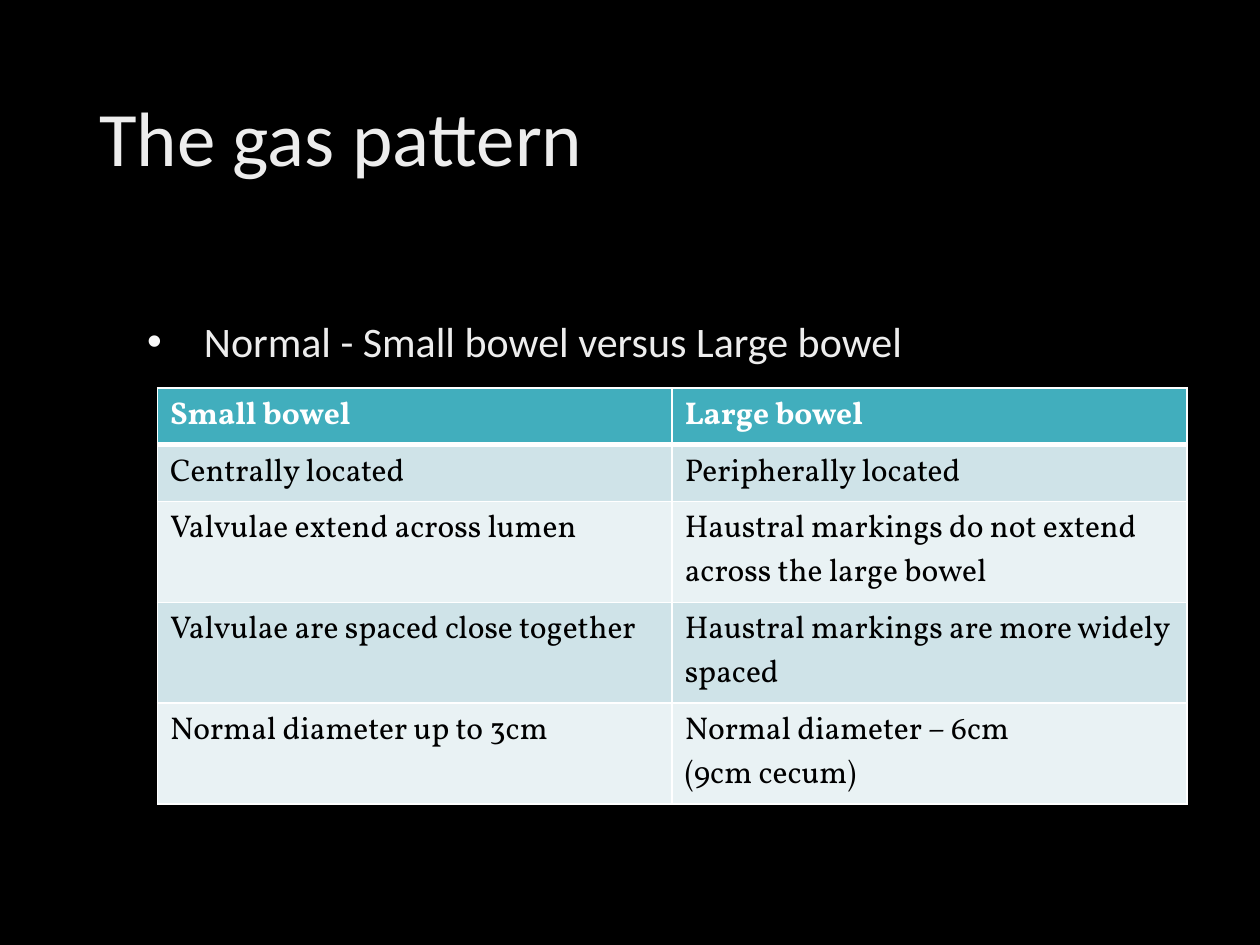
"""Build the gas pattern slide comparing small and large bowel."""
import pptx
import pptx.dml.color
import pptx.enum.text
import pptx.oxml
import pptx.oxml.ns
import pptx.util

TITLE = "The gas pattern"
BULLET = "Normal - Small bowel versus Large bowel"
ROWS = [
    ("Small bowel", "Large bowel"),
    ("Centrally located", "Peripherally located"),
    ("Valvulae extend across lumen", "Haustral markings do not extend across the large bowel"),
    ("Valvulae are spaced close together", "Haustral markings are more widely spaced"),
    ("Normal diameter up to 3cm", "Normal diameter – 6cm\n(9cm cecum)"),
]
ROW_HEIGHTS = [0.45, 0.45, 0.8, 0.8, 0.8]
TABLE_WIDTH = 8.17
COLORS = {
    "background": "000000", "text": "EDEDED", "bullet": "F9F9F9",
    "header": "41AEBD", "header_text": "FFFFFF", "cell_text": "000000",
    "odd": "CFE3E8", "even": "E9F2F4", "border": "FFFFFF",
}
NS = pptx.oxml.ns.nsdecls("a")
inch = pptx.util.Inches


def rgb(name):
    return pptx.dml.color.RGBColor.from_string(COLORS[name])


def style(p, font, size, color, bold=False):
    for r in p.runs:
        r.font.name, r.font.size, r.font.bold = font, pptx.util.Pt(size), bold
        r.font.color.rgb = rgb(color)


def add_text(s, text, box, size, anchor):
    tf = s.shapes.add_textbox(*map(inch, box)).text_frame
    tf.word_wrap = True
    tf.vertical_anchor = anchor
    p = tf.paragraphs[0]
    p.text = text
    p.line_spacing = 0.9
    style(p, "Calibri", size, "text")
    return p


def add_bullet(p, indent, hanging):
    pPr = p._p.get_or_add_pPr()
    pPr.set("marL", str(inch(indent)))
    pPr.set("indent", str(-inch(hanging)))
    for xml in (
        f'<a:buClr {NS}><a:srgbClr val="{COLORS["bullet"]}"/></a:buClr>',
        f'<a:buFont {NS} typeface="Arial"/>',
        f'<a:buChar {NS} char="•"/>',
    ):
        pPr.append(pptx.oxml.parse_xml(xml))


def add_borders(cell, top, bottom):
    tcPr = cell._tc.get_or_add_tcPr()
    widths = {"lnL": 1, "lnR": 1, "lnT": top, "lnB": bottom}
    for i, (side, width) in enumerate(widths.items()):
        tcPr.insert(i, pptx.oxml.parse_xml(
            f'<a:{side} {NS} w="{pptx.util.Pt(width)}"><a:solidFill>'
            f'<a:srgbClr val="{COLORS["border"]}"/></a:solidFill></a:{side}>'))


def add_comparison(s, left, top):
    columns = len(ROWS[0])
    table = s.shapes.add_table(
        len(ROWS), columns, inch(left), inch(top),
        inch(TABLE_WIDTH), inch(sum(ROW_HEIGHTS))).table
    for column in table.columns:
        column.width = inch(TABLE_WIDTH / columns)
    for i, (texts, height) in enumerate(zip(ROWS, ROW_HEIGHTS)):
        table.rows[i].height = inch(height)
        header = i == 0
        fill = "header" if header else "odd" if i % 2 else "even"
        for j, text in enumerate(texts):
            cell = table.cell(i, j)
            cell.fill.solid()
            cell.fill.fore_color.rgb = rgb(fill)
            add_borders(cell, 3 if i == 1 else 1, 3 if header else 1)
            cell.text_frame.text = text
            for p in cell.text_frame.paragraphs:
                style(p, "Vollkorn", 18, "header_text" if header else "cell_text", header)


def main():
    prs = pptx.Presentation()
    prs.slide_width, prs.slide_height = inch(10), inch(7.5)
    s = prs.slides.add_slide(prs.slide_layouts[6])
    s.background.fill.solid()
    s.background.fill.fore_color.rgb = rgb("background")
    anchor = pptx.enum.text.MSO_ANCHOR
    add_text(s, TITLE, (0.69, 0.4, 8.62, 1.45), 44, anchor.MIDDLE)
    p = add_text(s, BULLET, (0.92, 2.5, 8.39, 4.26), 24, anchor.TOP)
    add_bullet(p, 0.6, 0.45)
    add_comparison(s, 1.25, 3.08)
    prs.save("out.pptx")


if __name__ == "__main__":
    main()
